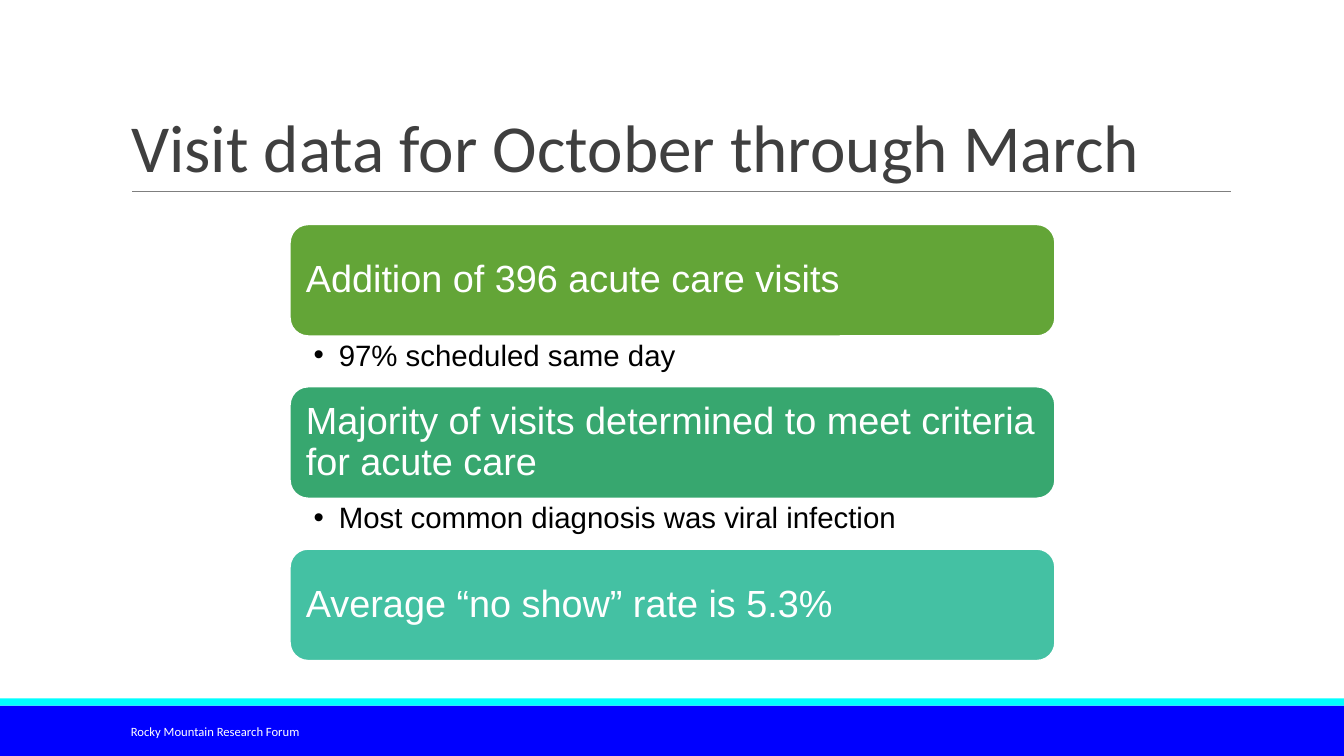
from dataclasses import dataclass

from lxml import etree
from pptx import Presentation
from pptx.dml.color import RGBColor
from pptx.enum.shapes import MSO_CONNECTOR, MSO_SHAPE
from pptx.enum.text import MSO_ANCHOR, MSO_AUTO_SIZE, PP_ALIGN
from pptx.oxml.ns import qn
from pptx.util import Inches, Pt

RECTANGLE = MSO_SHAPE.RECTANGLE
ROUNDED = MSO_SHAPE.ROUNDED_RECTANGLE
STRAIGHT = MSO_CONNECTOR.STRAIGHT
TOP, MIDDLE, BOTTOM = MSO_ANCHOR.TOP, MSO_ANCHOR.MIDDLE, MSO_ANCHOR.BOTTOM
LEFT = PP_ALIGN.LEFT
NO_AUTOFIT = MSO_AUTO_SIZE.NONE

SLIDE_WIDTH, SLIDE_HEIGHT = 13.33, 7.5
LIST_LEFT, LIST_TOP, LIST_WIDTH = 2.87, 2.22, 7.6
CARD_HEIGHT, DETAIL_HEIGHT = 1.12, 0.49
BULLET_INDENT = 0.25


@dataclass
class Finding:
    headline: str
    color: str
    detail: str = ""


@dataclass
class TextStyle:
    font: str
    size: float
    color: str
    anchor: MSO_ANCHOR = MIDDLE
    insets: tuple[float, float, float, float] = (0.1, 0.05, 0.1, 0.05)
    line_spacing: float = 1.0


TITLE_STYLE = TextStyle("Calibri", 48, "3F3F3F", BOTTOM, line_spacing=0.85)
FOOTER_STYLE = TextStyle("Calibri", 9, "FFFFFF")
HEADLINE_STYLE = TextStyle("Arial", 27, "FFFFFF", MIDDLE, (0.11,) * 4, 0.9)
DETAIL_STYLE = TextStyle("Arial", 21, "000000", TOP, (0.24, 0.04, 0.21, 0.04), 0.9)

FINDINGS = [
    Finding("Addition of 396 acute care visits", "63A537", "97% scheduled same day"),
    Finding("Majority of visits determined to meet criteria for acute care",
            "37A76F", "Most common diagnosis was viral infection"),
    Finding("Average “no show” rate is 5.3%", "44C1A3"),
]


def rgb(color: str) -> RGBColor:
    return RGBColor.from_string(color)


def write(shape, text: str, style: TextStyle):
    """Fill a shape with one styled paragraph and return the paragraph."""
    frame = shape.text_frame
    frame.text = text
    frame.word_wrap = True
    frame.auto_size = NO_AUTOFIT
    frame.vertical_anchor = style.anchor
    (frame.margin_left, frame.margin_top,
     frame.margin_right, frame.margin_bottom) = map(Inches, style.insets)
    paragraph = frame.paragraphs[0]
    paragraph.alignment = LEFT
    paragraph.line_spacing = style.line_spacing
    paragraph.font.name = style.font
    paragraph.font.size = Pt(style.size)
    paragraph.font.color.rgb = rgb(style.color)
    return paragraph


def add_block(slide, kind, left: float, top: float, width: float, height: float,
              color: str):
    block = slide.shapes.add_shape(
        kind, Inches(left), Inches(top), Inches(width), Inches(height))
    block.shadow.inherit = False
    block.fill.solid()
    block.fill.fore_color.rgb = rgb(color)
    block.line.fill.background()
    return block


def add_text(slide, left: float, top: float, width: float, height: float,
             text: str, style: TextStyle):
    box = slide.shapes.add_textbox(
        Inches(left), Inches(top), Inches(width), Inches(height))
    return write(box, text, style)


def add_bullet(paragraph) -> None:
    properties = paragraph._p.get_or_add_pPr()
    properties.set("marL", str(Inches(BULLET_INDENT)))
    properties.set("indent", str(-Inches(BULLET_INDENT)))
    etree.SubElement(properties, qn("a:buFont")).set("typeface", "Arial")
    etree.SubElement(properties, qn("a:buChar")).set("char", "•")
    # The schema wants bullets ahead of the default run properties
    defaults = properties.find(qn("a:defRPr"))
    if defaults is not None:
        properties.append(defaults)


def add_title(slide, text: str) -> None:
    title = slide.shapes.title
    title.left, title.top = Inches(1.2), Inches(0.31)
    title.width, title.height = Inches(11), Inches(1.59)
    write(title, text, TITLE_STYLE)

    rule = slide.shapes.add_connector(
        STRAIGHT, Inches(1.31), Inches(1.9), Inches(12.21), Inches(1.9))
    rule.line.color.rgb = rgb("7F7F7F")
    rule.line.width = Pt(0.75)
    etree.SubElement(rule._element.spPr, qn("a:effectLst"))


def add_footer(slide, text: str) -> None:
    add_block(slide, RECTANGLE, 0, 7, SLIDE_WIDTH, 0.5, "0000FF")
    add_block(slide, RECTANGLE, 0, 6.93, SLIDE_WIDTH, 0.07, "00FFFF")
    add_text(slide, 1.2, 7.06, 2.7, 0.4, text, FOOTER_STYLE)


def add_finding(slide, finding: Finding, top: float) -> None:
    card = add_block(slide, ROUNDED, LIST_LEFT, top, LIST_WIDTH, CARD_HEIGHT,
                     finding.color)
    card.line.color.rgb = rgb("FFFFFF")
    card.line.width = Pt(2)
    write(card, finding.headline, HEADLINE_STYLE)
    if finding.detail:
        add_bullet(add_text(slide, LIST_LEFT, top + CARD_HEIGHT, LIST_WIDTH,
                            DETAIL_HEIGHT, finding.detail, DETAIL_STYLE))


def main() -> None:
    deck = Presentation()
    deck.slide_width, deck.slide_height = Inches(SLIDE_WIDTH), Inches(SLIDE_HEIGHT)
    slide = deck.slides.add_slide(deck.slide_layouts.get_by_name("Title Only"))

    # Frame of the slide
    add_footer(slide, "Rocky Mountain Research Forum")
    add_title(slide, "Visit data for October through March")

    # Stacked findings
    for index, finding in enumerate(FINDINGS):
        add_finding(slide, finding, LIST_TOP + index * (CARD_HEIGHT + DETAIL_HEIGHT))

    deck.save("out.pptx")


if __name__ == "__main__":
    main()
